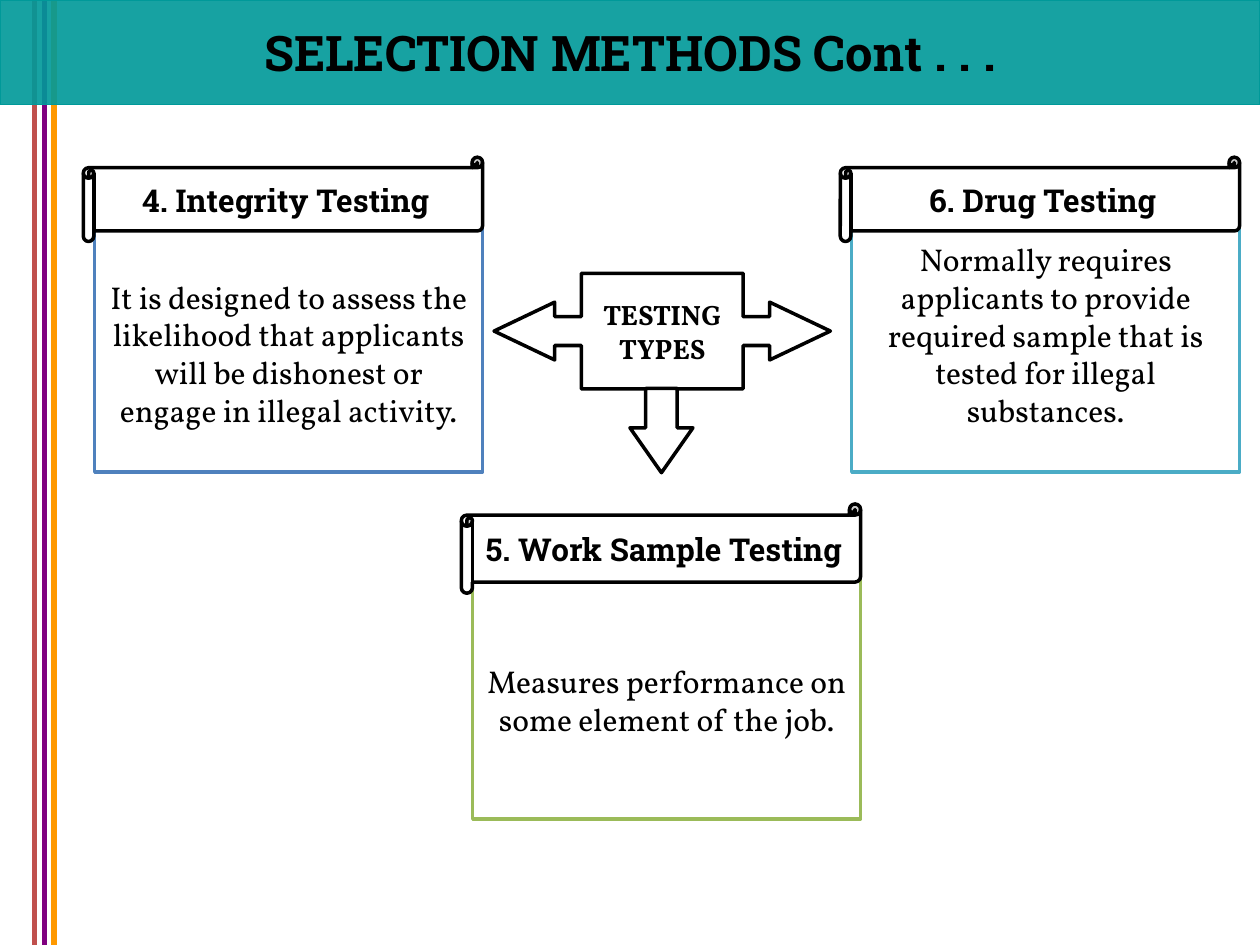
from dataclasses import dataclass

import lxml.etree
import pptx
import pptx.dml.color
import pptx.enum.shapes
import pptx.enum.text
import pptx.oxml.ns
import pptx.util

Cm = pptx.util.Cm
Pt = pptx.util.Pt
Shapes = pptx.enum.shapes.MSO_SHAPE
qn = pptx.oxml.ns.qn

HEADING_FONT = "Roboto Slab"
BODY_FONT = "Vollkorn"
BLACK, WHITE, TEAL = "000000", "FFFFFF", "009999"


@dataclass
class Stripe:
    x: float
    top: float
    color: str


@dataclass
class Card:
    """A described testing type; x and y locate its body box, in cm."""
    heading: str
    description: str
    x: float
    y: float
    color: str
    scroll_height: float = 1.7
    top_inset: float = 0.13


STRIPES = [
    Stripe(0.69, 0, "C0504D"),
    Stripe(1.09, 0, "FF9900"),
    Stripe(0.89, -0.08, "800080"),
]

CARDS = [
    Card("4. Integrity Testing",
         "It is designed to assess the likelihood that applicants will be "
         "dishonest or engage in illegal activity.",
         1.91, 3.96, "4F81BD", top_inset=0.89),
    Card("6. Drug Testing",
         "Normally requires applicants to provide required sample that is "
         "tested for illegal substances.",
         17.17, 3.96, "4BACC6"),
    Card("5. Work Sample Testing",
         "Measures performance on some element of the job.",
         9.53, 10.95, "9BBB59", scroll_height=1.8, top_inset=0.89),
]


def rgb(color: str):
    return pptx.dml.color.RGBColor.from_string(color)


def paint(shape, fill: str, line: str, width: float) -> None:
    shape.fill.solid()
    shape.fill.fore_color.rgb = rgb(fill)
    shape.line.color.rgb = rgb(line)
    shape.line.width = Pt(width)


def write(shape, text: str, *, font: str, size: float, bold: bool = False,
          wrap: bool = True, top_inset: float = 0.13) -> None:
    """Centre black text in a shape, one paragraph per line of text."""
    frame = shape.text_frame
    frame.text = text
    frame.word_wrap = wrap
    frame.auto_size = pptx.enum.text.MSO_AUTO_SIZE.NONE
    frame.vertical_anchor = pptx.enum.text.MSO_ANCHOR.MIDDLE
    frame.margin_top = Cm(top_inset)
    for paragraph in frame.paragraphs:
        paragraph.alignment = pptx.enum.text.PP_ALIGN.CENTER
        for run in paragraph.runs:
            run.font.name = font
            run.font.size = Pt(size)
            run.font.bold = bold
            run.font.color.rgb = rgb(BLACK)


def add_box(slide, kind, x: float, y: float, width: float, height: float,
            line: str = BLACK):
    box = slide.shapes.add_shape(kind, Cm(x), Cm(y), Cm(width), Cm(height))
    box.shadow.inherit = False
    paint(box, WHITE, line, 2)
    return box


def add_stripe(slide, stripe: Stripe) -> None:
    line = slide.shapes.add_connector(
        pptx.enum.shapes.MSO_CONNECTOR.STRAIGHT,
        Cm(stripe.x), Cm(stripe.top), Cm(stripe.x), Cm(19.05))
    line.line.color.rgb = rgb(stripe.color)
    line.line.width = Pt(3)
    properties = line._element.find(qn("p:spPr"))
    lxml.etree.SubElement(properties, qn("a:effectLst"))


def add_title_band(slide, text: str) -> None:
    """Format the title as a translucent band in front of the stripes."""
    title = slide.shapes.title
    title.left, title.top = Cm(0), Cm(0)
    title.width, title.height = Cm(25.4), Cm(2.11)
    paint(title, TEAL, TEAL, 0.75)
    color = title._element.find(qn("p:spPr")).find(
        f"{qn('a:solidFill')}/{qn('a:srgbClr')}")
    lxml.etree.SubElement(color, qn("a:alpha"), val="91000")
    write(title, text, font=HEADING_FONT, size=28, bold=True, wrap=False)
    slide.shapes._spTree.append(title._element)


def add_card(slide, card: Card) -> None:
    body = add_box(slide, Shapes.RECTANGLE, card.x, card.y, 7.82, 5.56,
                   card.color)
    write(body, card.description, font=BODY_FONT, size=18,
          top_inset=card.top_inset)
    scroll = add_box(slide, Shapes.HORIZONTAL_SCROLL, card.x - 0.23,
                     card.y - 0.79, 8.05, card.scroll_height)
    write(scroll, card.heading, font=HEADING_FONT, size=18, bold=True)


def add_hub(slide) -> None:
    """Draw the central callout and its arrow pointing down."""
    callout = add_box(slide, Shapes.LEFT_RIGHT_ARROW_CALLOUT,
                      9.96, 5.51, 6.78, 2.33)
    for index, value in enumerate((0.25, 0.25, 0.525, 0.481)):
        callout.adjustments[index] = value
    write(callout, "TESTING\nTYPES", font=BODY_FONT, size=16, bold=True)
    arrow = add_box(slide, Shapes.DOWN_ARROW, 12.7, 7.83, 1.27, 1.7)
    arrow.adjustments[1] = 0.712


def main() -> None:
    deck = pptx.Presentation()
    deck.slide_width, deck.slide_height = Cm(25.4), Cm(19.05)
    slide = deck.slides.add_slide(deck.slide_layouts.get_by_name("Title Only"))
    for stripe in STRIPES:
        add_stripe(slide, stripe)
    add_title_band(slide, "SELECTION METHODS Cont . . .")
    for card in CARDS:
        add_card(slide, card)
    add_hub(slide)
    deck.save("out.pptx")


if __name__ == "__main__":
    main()
